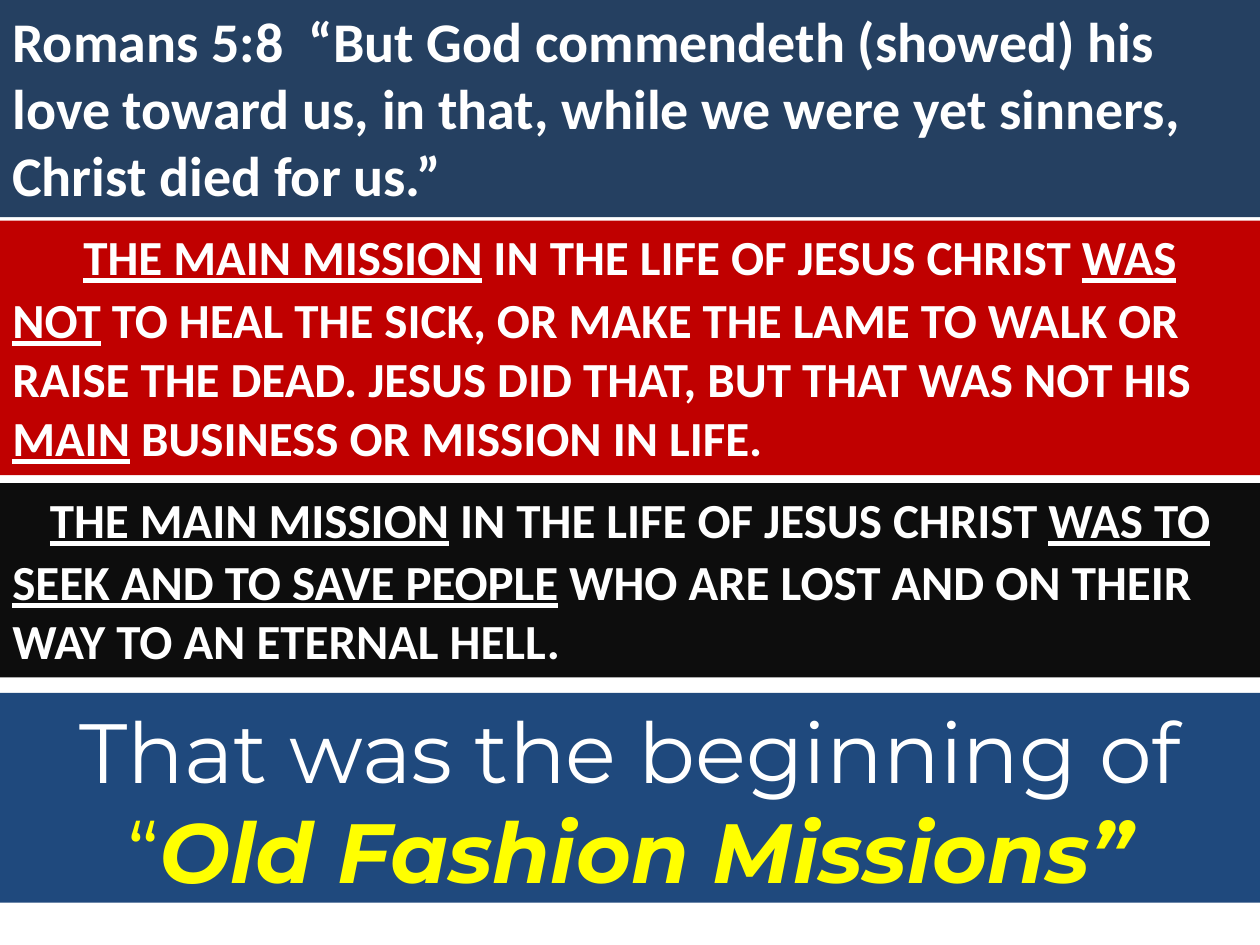
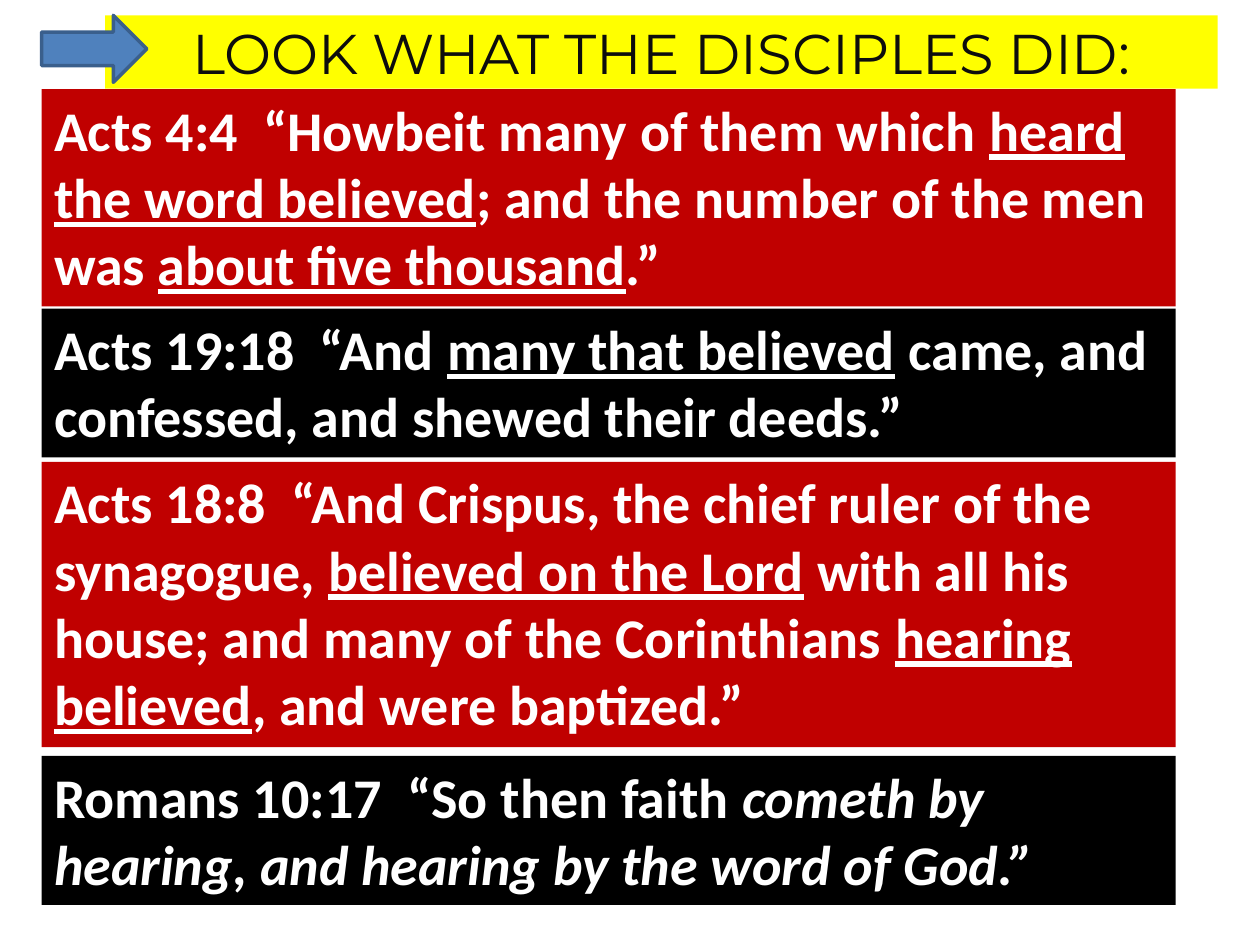
from dataclasses import dataclass, field
from typing import Any

import pptx
import pptx.dml.color
import pptx.enum.shapes
import pptx.enum.text
import pptx.presentation
import pptx.shapes.autoshape
import pptx.slide
import pptx.util

Cm = pptx.util.Cm
RGBColor = pptx.dml.color.RGBColor
Align = pptx.enum.text.PP_ALIGN
Anchor = pptx.enum.text.MSO_ANCHOR
AutoSize = pptx.enum.text.MSO_AUTO_SIZE
Preset = pptx.enum.shapes.MSO_SHAPE

WHITE = RGBColor(0xFF, 0xFF, 0xFF)
BLACK = RGBColor(0x00, 0x00, 0x00)
CHARCOAL = RGBColor(0x0D, 0x0D, 0x0D)
RED = RGBColor(0xC0, 0x00, 0x00)
YELLOW = RGBColor(0xFF, 0xFF, 0x00)
SLATE = RGBColor(0x25, 0x40, 0x61)
NAVY = RGBColor(0x1F, 0x49, 0x7D)
ARROW_BLUE = RGBColor(0x4F, 0x81, 0xBD)
ARROW_EDGE = RGBColor(0x3A, 0x5F, 0x8C)

SLIDE_WIDTH = 25.4
SLIDE_HEIGHT = 19.05
INSET_HEIGHT = 0.25
LINE_HEIGHT_PER_POINT = 0.043
VERSE_LEFT = 0.84
VERSE_WIDTH = 22.86

VERSE_STYLE = {"name": "Calibri", "bold": True}
HEADING_STYLE = {"name": "Montserrat", "bold": False}


@dataclass(frozen=True)
class Run:
    text: str
    format: dict[str, Any] = field(default_factory=dict)
    color: RGBColor = WHITE


@dataclass(frozen=True)
class Band:
    top: float
    lines: int
    fill: RGBColor
    runs: list[Run]
    size: int = 32
    alignment: Align = Align.LEFT


@dataclass(frozen=True)
class Heading:
    left: float
    top: float
    width: float
    height: float
    fill: RGBColor
    size: int
    anchor: Anchor
    runs: list[Run]


def underlined(text: str) -> Run:
    return Run(text, {"underline": True})


def mission_label(top: float, fill: RGBColor, ending: str) -> Band:
    runs = [underlined("THE MAIN MISSION"), Run(" IN THE LIFE OF JESUS CHRIST "), underlined(ending)]
    return Band(top, 1, fill, runs, 28, Align.CENTER)


MISSION_BANDS = [
    Band(0, 3, SLATE, [
        Run("Romans 5:8  “But God commendeth (showed) his love toward us, in that, "
            "while we were yet sinners, Christ died for us.”"),
    ]),
    mission_label(4.45, RED, "WAS"),
    Band(5.72, 3, RED, [
        underlined("NOT"),
        Run(" TO HEAL THE SICK, OR MAKE THE LAME TO WALK OR RAISE THE DEAD. "
            "JESUS DID THAT, BUT THAT WAS NOT HIS "),
        underlined("MAIN"),
        Run(" BUSINESS OR MISSION IN LIFE."),
    ], 28),
    Band(11, 2, CHARCOAL, [
        underlined("SEEK AND TO SAVE PEOPLE"),
        Run(" WHO ARE LOST AND ON THEIR WAY TO AN ETERNAL HELL."),
    ], 28),
    mission_label(9.74, CHARCOAL, "WAS TO"),
]

MISSION_HEADING = Heading(0, 13.97, SLIDE_WIDTH, 4.23, NAVY, 48, Anchor.TOP, [
    Run("That was the beginning of "),
    Run("“", color=YELLOW),
    Run("Old Fashion Missions”", {"bold": True, "italic": True}, YELLOW),
])

DISCIPLES_HEADING = Heading(2.12, 0.31, 22.43, 1.48, YELLOW, 32, Anchor.MIDDLE, [
    Run("LOOK WHAT THE DISCIPLES DID:", color=CHARCOAL),
])

DISCIPLES_BANDS = [
    Band(1.8, 3, RED, [
        Run("Acts 4:4  “Howbeit many of them which "),
        underlined("heard the word believed"),
        Run("; and the number of the men was "),
        underlined("about five thousand"),
        Run(".”"),
    ]),
    Band(6.22, 2, BLACK, [
        Run("Acts 19:18  “And "),
        underlined("many that believed"),
        Run(" came, and confessed, and shewed their deeds.”"),
    ]),
    Band(9.31, 4, RED, [
        Run("Acts 18:8  “And Crispus, the chief ruler of the synagogue, "),
        underlined("believed on the Lord"),
        Run(" with all his house; and many of the Corinthians "),
        underlined("hearing"),
        Run(" "),
        underlined("believed"),
        Run(", and were baptized.”"),
    ]),
    Band(15.24, 2, BLACK, [
        Run("Romans 10:17  “So then faith "),
        Run("cometh by hearing, and hearing by the word of God.”", {"italic": True}),
    ]),
]


def set_attributes(target: Any, values: dict[str, Any]) -> None:
    for name, value in values.items():
        setattr(target, name, value)


def add_filled_shape(slide: pptx.slide.Slide, preset: Preset, left: float, top: float,
                     width: float, height: float, fill: RGBColor) -> pptx.shapes.autoshape.Shape:
    shape = slide.shapes.add_shape(preset, Cm(left), Cm(top), Cm(width), Cm(height))
    shape.shadow.inherit = False
    shape.fill.solid()
    shape.fill.fore_color.rgb = fill
    shape.line.fill.background()
    return shape


def write_runs(shape: pptx.shapes.autoshape.Shape, runs: list[Run], style: dict[str, Any],
               size: int, alignment: Align, frame_format: dict[str, Any]) -> None:
    set_attributes(shape.text_frame, {"word_wrap": True, **frame_format})
    paragraph = shape.text_frame.paragraphs[0]
    paragraph.alignment = alignment
    for run in runs:
        text_run = paragraph.add_run()
        text_run.text = run.text
        set_attributes(text_run.font, {**style, "size": pptx.util.Pt(size), **run.format})
        text_run.font.color.rgb = run.color


def draw_band(slide: pptx.slide.Slide, band: Band, left: float, width: float) -> None:
    height = INSET_HEIGHT + band.lines * band.size * LINE_HEIGHT_PER_POINT
    shape = add_filled_shape(slide, Preset.RECTANGLE, left, band.top, width, height, band.fill)
    frame_format = {"vertical_anchor": Anchor.TOP, "auto_size": AutoSize.SHAPE_TO_FIT_TEXT}
    write_runs(shape, band.runs, VERSE_STYLE, band.size, band.alignment, frame_format)


def draw_heading(slide: pptx.slide.Slide, heading: Heading) -> None:
    shape = add_filled_shape(slide, Preset.RECTANGLE, heading.left, heading.top,
                             heading.width, heading.height, heading.fill)
    frame_format = {"vertical_anchor": heading.anchor, "auto_size": AutoSize.NONE}
    write_runs(shape, heading.runs, HEADING_STYLE, heading.size, Align.CENTER, frame_format)


def draw_arrow(slide: pptx.slide.Slide) -> None:
    arrow = add_filled_shape(slide, Preset.RIGHT_ARROW, VERSE_LEFT, 0.31, 2.12, 1.35, ARROW_BLUE)
    arrow.line.color.rgb = ARROW_EDGE
    arrow.line.width = pptx.util.Pt(2)


def add_blank_slide(presentation: pptx.presentation.Presentation) -> pptx.slide.Slide:
    return presentation.slides.add_slide(presentation.slide_layouts[6])


def build_mission_slide(presentation: pptx.presentation.Presentation) -> None:
    slide = add_blank_slide(presentation)
    for band in MISSION_BANDS:
        draw_band(slide, band, 0, SLIDE_WIDTH)
    draw_heading(slide, MISSION_HEADING)


def build_disciples_slide(presentation: pptx.presentation.Presentation) -> None:
    slide = add_blank_slide(presentation)
    draw_heading(slide, DISCIPLES_HEADING)
    draw_arrow(slide)
    for band in DISCIPLES_BANDS:
        draw_band(slide, band, VERSE_LEFT, VERSE_WIDTH)


def main() -> None:
    presentation = pptx.Presentation()
    set_attributes(presentation, {"slide_width": Cm(SLIDE_WIDTH), "slide_height": Cm(SLIDE_HEIGHT)})
    build_mission_slide(presentation)
    build_disciples_slide(presentation)
    presentation.save("out.pptx")


if __name__ == "__main__":
    main()
